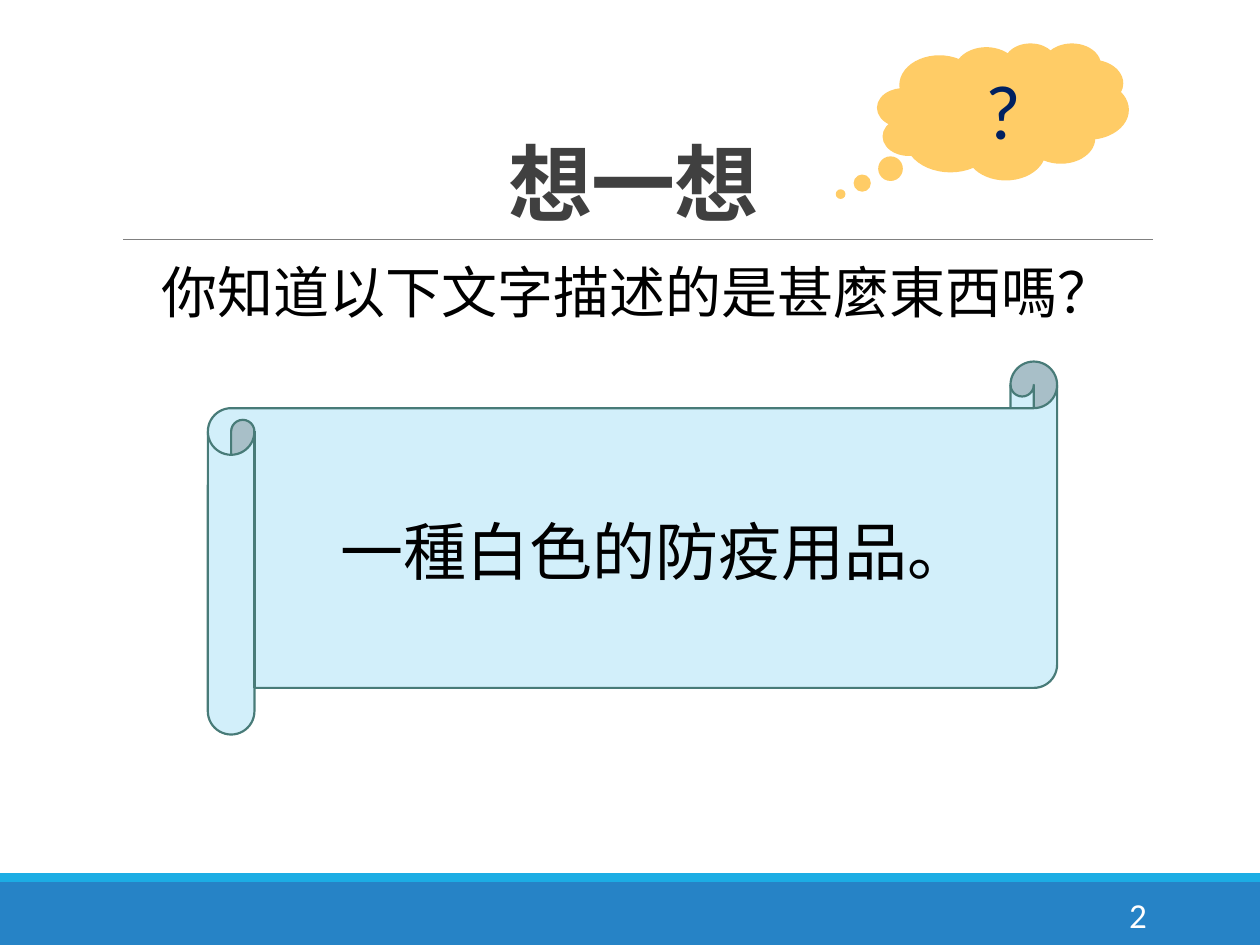
import pptx
import pptx.util
import pptx.dml.color
import pptx.enum.shapes
import pptx.enum.text
import pptx.oxml
import pptx.oxml.ns

Inches = pptx.util.Inches
Pt = pptx.util.Pt
SHAPE = pptx.enum.shapes.MSO_SHAPE
ALIGN = pptx.enum.text.PP_ALIGN
ANCHOR = pptx.enum.text.MSO_ANCHOR

COLORS = {
    "band": "2683C6", "stripe": "1CADE4", "rule": "808080",
    "scroll": "D2EFFA", "scroll_edge": "487B78", "cloud": "FFCC66",
    "title": "404040", "text": "000000", "question": "002060", "number": "FFFFFF",
}
CJK = "Noto Sans CJK SC"
LATIN = "Calibri"


def color(name):
    return pptx.dml.color.RGBColor.from_string(COLORS[name])


def place(shape, box):
    shape.left, shape.top, shape.width, shape.height = (Inches(n) for n in box)


def add_filled(slide, kind, box, fill, edge=None):
    shape = slide.shapes.add_shape(kind, *(Inches(n) for n in box))
    shape.shadow.inherit = False
    shape.fill.solid()
    shape.fill.fore_color.rgb = color(fill)
    if edge:
        shape.line.color.rgb = color(edge)
        shape.line.width = Pt(1.25)
    else:
        shape.line.fill.background()
    return shape


def format_para(para, size, font, tint, align, bold=False):
    para.alignment = align
    for span in para.runs:
        span.font.size = Pt(size)
        span.font.name = font
        span.font.bold = bold
        span.font.color.rgb = color(tint)
        if font == CJK:
            east_asian = pptx.oxml.parse_xml(
                f'<a:ea {pptx.oxml.ns.nsdecls("a")} typeface="{font}"/>')
            span.font.fill  # the fill precedes the typefaces
            span.font._element.find(pptx.oxml.ns.qn("a:latin")).addnext(east_asian)


def add_rule(slide, left, right, top):
    rule = slide.shapes.add_connector(
        pptx.enum.shapes.MSO_CONNECTOR.STRAIGHT,
        Inches(left), Inches(top), Inches(right), Inches(top))
    rule.line.color.rgb = color("rule")
    rule.line.width = Pt(0.5)
    rule._element.spPr.append(
        pptx.oxml.parse_xml(f'<a:effectLst {pptx.oxml.ns.nsdecls("a")}/>'))


def add_footer(slide, box):
    left, top, width, height = box
    stripe = 0.07
    add_filled(slide, SHAPE.RECTANGLE, (left, top + stripe, width, height - stripe), "band")
    add_filled(slide, SHAPE.RECTANGLE, (left, top, width, stripe), "stripe")
    number = slide.shapes.add_textbox(
        Inches(left + 8.12), Inches(top + 0.13), Inches(1.08), Inches(0.4))
    frame = number.text_frame
    frame.word_wrap = True
    frame.vertical_anchor = ANCHOR.MIDDLE
    frame.text = "2"
    format_para(frame.paragraphs[0], 20, LATIN, "number", ALIGN.RIGHT)


def fill_title(title, box):
    place(title, box)
    frame = title.text_frame
    frame.auto_size = pptx.enum.text.MSO_AUTO_SIZE.NONE
    frame.vertical_anchor = ANCHOR.BOTTOM
    frame.text = "想一想"
    para = frame.paragraphs[0]
    para.line_spacing = 0.85
    format_para(para, 48, CJK, "title", ALIGN.CENTER, bold=True)
    para.runs[0].font._element.set("spc", "-50")


def fill_body(body, box):
    place(body, box)
    frame = body.text_frame
    frame.auto_size = pptx.enum.text.MSO_AUTO_SIZE.NONE
    frame.vertical_anchor = ANCHOR.TOP
    frame.margin_left = frame.margin_right = 0
    lines = [
        ("你知道以下文字描述的是甚麼東西嗎？", 32, ALIGN.LEFT, 0.48, 12),
        ("一種白色的防疫用品。", 36, ALIGN.CENTER, 0.36, 110),
    ]
    frame.text = "\n".join(line[0] for line in lines)
    for para, (_, size, align, indent, before) in zip(frame.paragraphs, lines):
        para.line_spacing = 0.9
        para.space_before = Pt(before)
        para.space_after = Pt(2)
        format_para(para, size, CJK, "text", align)
        properties = para._p.get_or_add_pPr()
        properties.set("marL", str(Inches(indent)))
        properties.set("indent", "0")
        properties.append(
            pptx.oxml.parse_xml(f'<a:buNone {pptx.oxml.ns.nsdecls("a")}/>'))


def add_thought_cloud(slide, box):
    cloud = add_filled(slide, SHAPE.CLOUD_CALLOUT, box, "cloud", "cloud")
    cloud.adjustments[0] = -0.651
    cloud.adjustments[1] = 0.613
    frame = cloud.text_frame
    frame.vertical_anchor = ANCHOR.MIDDLE
    frame.margin_left = Inches(0.25)
    frame.text = "?"
    format_para(frame.paragraphs[0], 44, LATIN, "question", ALIGN.CENTER)


def build_riddle_slide(deck):
    slide = deck.slides.add_slide(deck.slide_layouts[1])
    title, body = slide.placeholders
    add_footer(slide, (0, 6.93, 10, 0.57))
    add_rule(slide, 0.98, 9.15, 1.9)
    scroll = add_filled(slide, SHAPE.HORIZONTAL_SCROLL,
                        (1.65, 2.87, 6.74, 2.96), "scroll", "scroll_edge")
    title._element.addprevious(scroll._element)  # keep the scroll behind the text
    fill_title(title, (0.9, 0.31, 8.25, 1.59))
    fill_body(body, (0.8, 2.05, 8.44, 4.4))
    add_thought_cloud(slide, (6.97, 0.35, 1.98, 1.07))


def main():
    deck = pptx.Presentation()
    deck.slide_width = Inches(10)
    deck.slide_height = Inches(7.5)
    build_riddle_slide(deck)
    deck.save("out.pptx")


if __name__ == "__main__":
    main()
